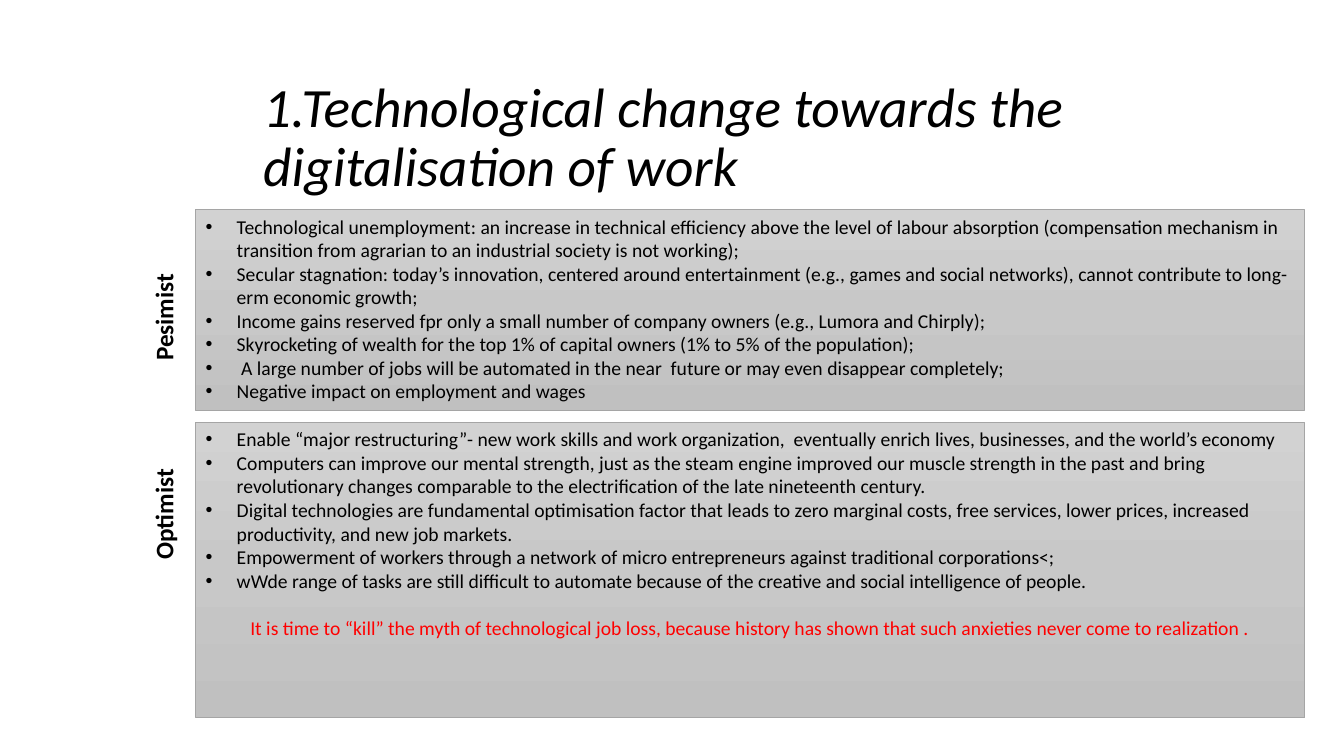
import copy

import pptx
import pptx.dml.color
import pptx.enum.shapes
import pptx.enum.text
import pptx.oxml.ns
import pptx.util
from lxml import etree
from pptx.util import Inches

qn = pptx.oxml.ns.qn


def color(value):
    return pptx.dml.color.RGBColor.from_string(value)


def write(para, text, size=14, fill="000000", bold=False, italic=False, bullet=False,
          align=pptx.enum.text.PP_ALIGN.LEFT, before=0):
    if bullet:
        properties = para._p.get_or_add_pPr()
        properties.set("marL", str(Inches(0.31)))
        properties.set("indent", str(-Inches(0.31)))
        etree.SubElement(properties, qn("a:buFont")).set("typeface", "Arial")
        etree.SubElement(properties, qn("a:buChar")).set("char", "•")
    para.alignment = align
    if before:
        para.space_before = pptx.util.Pt(before)
    span = para.add_run()
    span.text = text
    span.font.name = "Calibri"
    span.font.size = pptx.util.Pt(size)
    span.font.bold = bold
    span.font.italic = italic
    span.font.color.rgb = color(fill)


deck = pptx.Presentation()
deck.slide_width = Inches(13.33)
deck.slide_height = Inches(7.5)
page = deck.slides.add_slide(deck.slide_layouts[5])

title = page.shapes.title
title.left, title.top = Inches(2.51), Inches(0.68)
title.width, title.height = Inches(10.08), Inches(1.4)
title.text_frame.word_wrap = True
title.text_frame.auto_size = pptx.enum.text.MSO_AUTO_SIZE.NONE
title.text_frame.vertical_anchor = pptx.enum.text.MSO_ANCHOR.MIDDLE
heading = title.text_frame.paragraphs[0]
heading.line_spacing = 0.9
write(heading, "1.Technological change towards the digitalisation of work", size=39.6, italic=True)

pessimist_points = [
    "Technological unemployment: an increase in technical efficiency above the level of labour absorption (compensation mechanism in transition from agrarian to an industrial society is not working);",
    "Secular stagnation: today’s innovation, centered around entertainment (e.g., games and social networks), cannot contribute to long-erm economic growth;",
    "Income gains reserved fpr only a small number of company owners (e.g., Lumora and Chirply);",
    "Skyrocketing of wealth for the top 1% of capital owners (1% to 5% of the population);",
    " A large number of jobs will be automated in the near  future or may even disappear completely;",
    "Negative impact on employment and wages",
]
optimist_points = [
    "Enable “major restructuring”- new work skills and work organization,  eventually enrich lives, businesses, and the world’s economy",
    "Computers can improve our mental strength, just as the steam engine improved our muscle strength in the past and bring revolutionary changes comparable to the electrification of the late nineteenth century.",
    "Digital technologies are fundamental optimisation factor that leads to zero marginal costs, free services, lower prices, increased productivity, and new job markets.",
    "Empowerment of workers through a network of micro entrepreneurs against traditional corporations<;",
    "wWde range of tasks are still difficult to automate because of the creative and social intelligence of people.",
]
conclusion = "It is time to “kill” the myth of technological job loss, because history has shown that such anxieties never come to realization ."

views = [
    ("Pesimist", 2.38, 2.08, 1.99, pessimist_points, None),
    ("Optimist", 4.35, 4.19, 2.93, optimist_points, conclusion),
]
for name, label_top, panel_top, panel_height, points, closing in views:
    panel = page.shapes.add_shape(pptx.enum.shapes.MSO_SHAPE.RECTANGLE, Inches(1.94),
                                  Inches(panel_top), Inches(11), Inches(panel_height))
    panel.shadow.inherit = False
    panel.line.color.rgb = color("A5A5A5")
    panel.line.width = pptx.util.Pt(0.5)
    panel.fill.gradient()
    panel.fill.gradient_angle = 270
    stop_list = panel._element.spPr.find(".//" + qn("a:gsLst"))
    stop_list.insert(1, copy.deepcopy(stop_list[0]))
    shades = [(0, "D2D2D2"), (0.5, "C8C8C8"), (1, "C0C0C0")]
    for stop, (position, shade) in zip(panel.fill.gradient_stops, shades):
        stop.position = position
        stop.color.rgb = color(shade)

    frame = panel.text_frame
    frame.word_wrap = True
    frame.vertical_anchor = pptx.enum.text.MSO_ANCHOR.TOP
    for index, point in enumerate(points):
        para = frame.add_paragraph() if index else frame.paragraphs[0]
        write(para, point, bullet=True)
    if closing:
        write(frame.add_paragraph(), closing, fill="FF0000",
              align=pptx.enum.text.PP_ALIGN.CENTER, before=17)

    label = page.shapes.add_textbox(Inches(1.42), Inches(label_top), Inches(0.5), Inches(1.3))
    label.text_frame.word_wrap = True
    label.text_frame._txBody.bodyPr.set("vert", "vert270")
    write(label.text_frame.paragraphs[0], name, size=18, bold=True)

deck.save("out.pptx")
